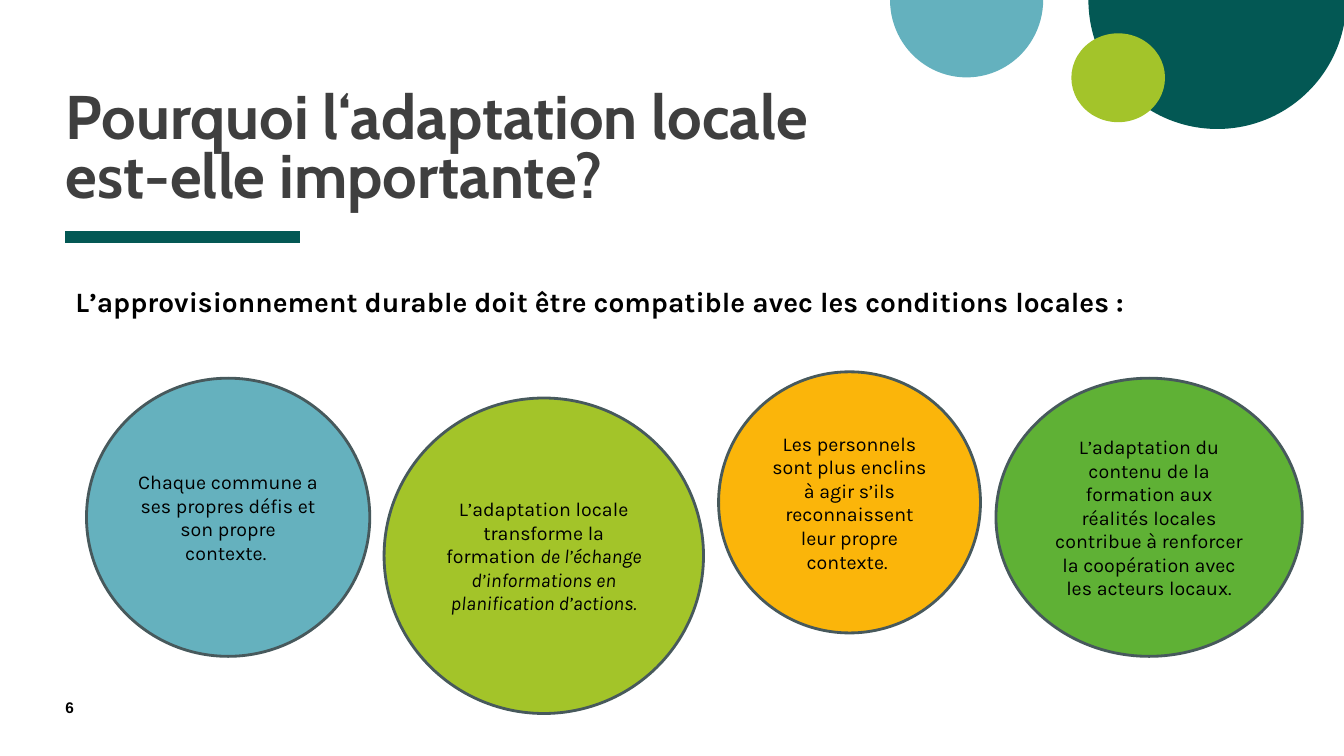
import pptx
import pptx.dml.color
import pptx.enum.shapes
import pptx.enum.text
import pptx.oxml
import pptx.oxml.ns
import pptx.util

Cm = pptx.util.Cm
Pt = pptx.util.Pt
SHAPE = pptx.enum.shapes.MSO_SHAPE
ANCHOR = pptx.enum.text.MSO_ANCHOR

TEAL = "035854"
BLACK = "000000"
MARGIN = 1.65

REASONS = [
    ((2.18, 9.53, 7.14, 7.01), "65B1BE",
     "Chaque commune a ses propres défis et son propre contexte. ", ""),
    ((18.11, 9.37, 6.6, 6.58), "FBB50A",
     "Les personnels sont plus enclins à agir s’ils reconnaissent leur propre contexte. ", ""),
    ((9.68, 10.03, 8.05, 7.95), "A3C429",
     "L’adaptation locale transforme la formation ",
     "de l’échange d’informations en planification d’actions."),
    ((25.1, 9.53, 7.72, 7.01), "5FB135",
     "L’adaptation du contenu de la formation aux réalités locales contribue à renforcer "
     "la coopération avec les acteurs locaux.", ""),
]


def color(value):
    return pptx.dml.color.RGBColor.from_string(value)


def style_font(font, name, size, ink, bold=False):
    font.name = name
    font.size = Pt(size)
    font.bold = bold
    font.color.rgb = color(ink)


def add_text(page, place, text, name, size, ink, inset=True, anchor=ANCHOR.TOP, spacing=None):
    box = page.shapes.add_textbox(*map(Cm, place))
    frame = box.text_frame
    frame.word_wrap = True
    frame.vertical_anchor = anchor
    if not inset:
        frame.margin_left = frame.margin_right = frame.margin_top = frame.margin_bottom = 0
    para = frame.paragraphs[0]
    para.text = text
    para.line_spacing = spacing
    style_font(para.font, name, size, ink, bold=True)


def add_round(page, kind, place, fill):
    shape = page.shapes.add_shape(kind, *map(Cm, place))
    shape.shadow.inherit = False
    shape.fill.solid()
    shape.fill.fore_color.rgb = color(fill)
    shape.line.fill.background()
    return shape


def add_half_disc(page, place, fill):
    disc = add_round(page, SHAPE.PIE, place, fill)
    disc.adjustments[0] = 0
    disc.adjustments[1] = 108


def add_rule(page, left, right, top):
    rule = page.shapes.add_connector(
        pptx.enum.shapes.MSO_CONNECTOR.STRAIGHT, Cm(left), Cm(top), Cm(right), Cm(top))
    rule.line.color.rgb = color(TEAL)
    rule.line.width = Pt(8)
    properties = rule._element.spPr
    properties.append(pptx.oxml.parse_xml(
        "<a:effectLst %s/>" % pptx.oxml.ns.nsdecls("a")))


def add_reason(page, place, fill, plain, italic):
    bubble = add_round(page, SHAPE.FLOWCHART_CONNECTOR, place, fill)
    bubble.line.color.rgb = color("47595C")
    bubble.line.width = Pt(2)
    frame = bubble.text_frame
    frame.word_wrap = True
    frame.vertical_anchor = ANCHOR.MIDDLE
    para = frame.paragraphs[0]
    para.alignment = pptx.enum.text.PP_ALIGN.CENTER
    style_font(para.font, "Karla", 14, BLACK)
    para.add_run().text = plain
    if italic:
        span = para.add_run()
        span.text = italic
        span.font.italic = True


def main():
    deck = pptx.Presentation()
    deck.slide_width = Cm(33.87)
    deck.slide_height = Cm(19.05)
    page = deck.slides.add_slide(deck.slide_layouts[6])

    add_half_disc(page, (27.43, -3.25, 6.5, 6.5), TEAL)
    add_rule(page, MARGIN, 7.57, 5.97)
    add_half_disc(page, (22.43, -1.96, 3.86, 3.91), "64B1BE")
    add_round(page, SHAPE.OVAL, (27, 0.84, 2.36, 2.24), "A3C42A")

    add_text(page, (MARGIN, 0.89, 20.55, 4.42),
             "Pourquoi l‘adaptation locale est-elle importante?",
             "Cabin", 44, "3F3F3F", inset=False, anchor=ANCHOR.BOTTOM, spacing=0.8)
    add_text(page, (MARGIN, 17.58, 1.45, 0.69), "6", "Arial", 11, BLACK, inset=False)
    add_text(page, (MARGIN, 7.04, 30.56, 1.12),
             "L’approvisionnement durable doit être compatible avec les conditions locales : ",
             "Karla", 20, BLACK)

    for reason in REASONS:
        add_reason(page, *reason)

    deck.save("out.pptx")


if __name__ == "__main__":
    main()
